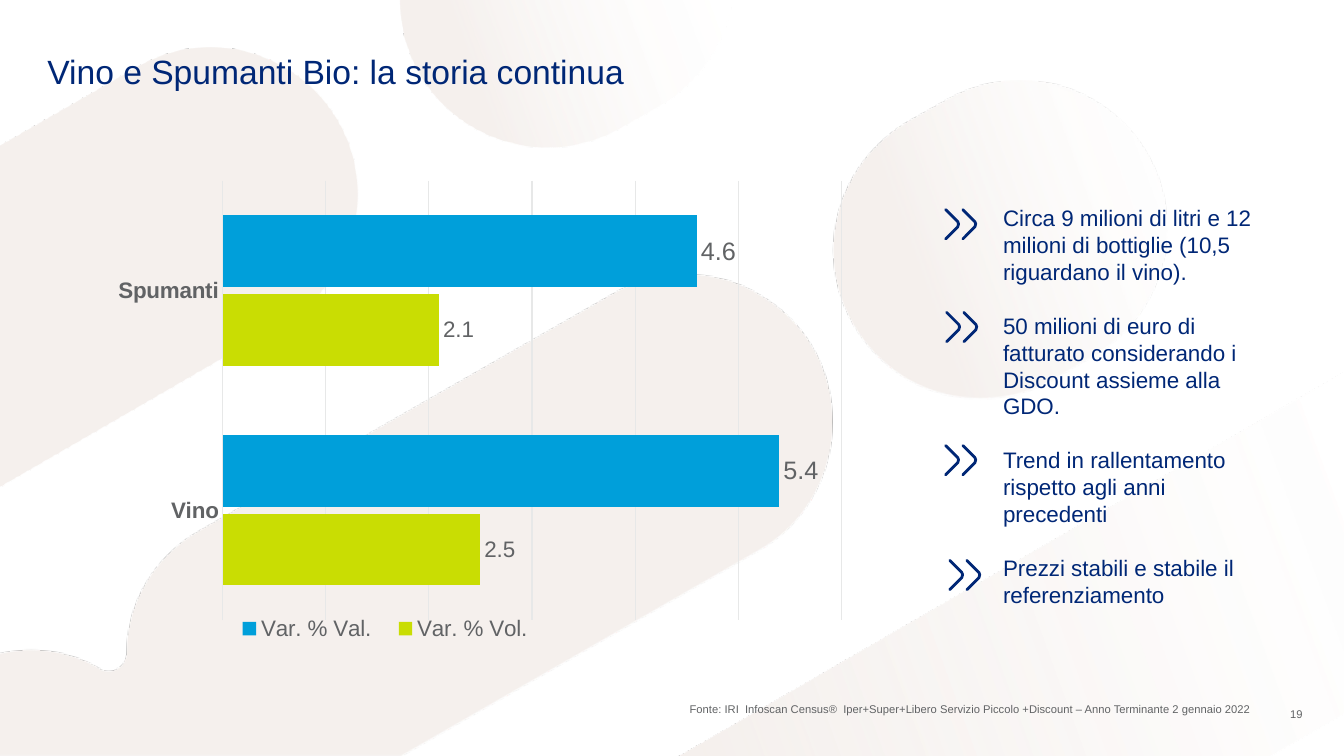
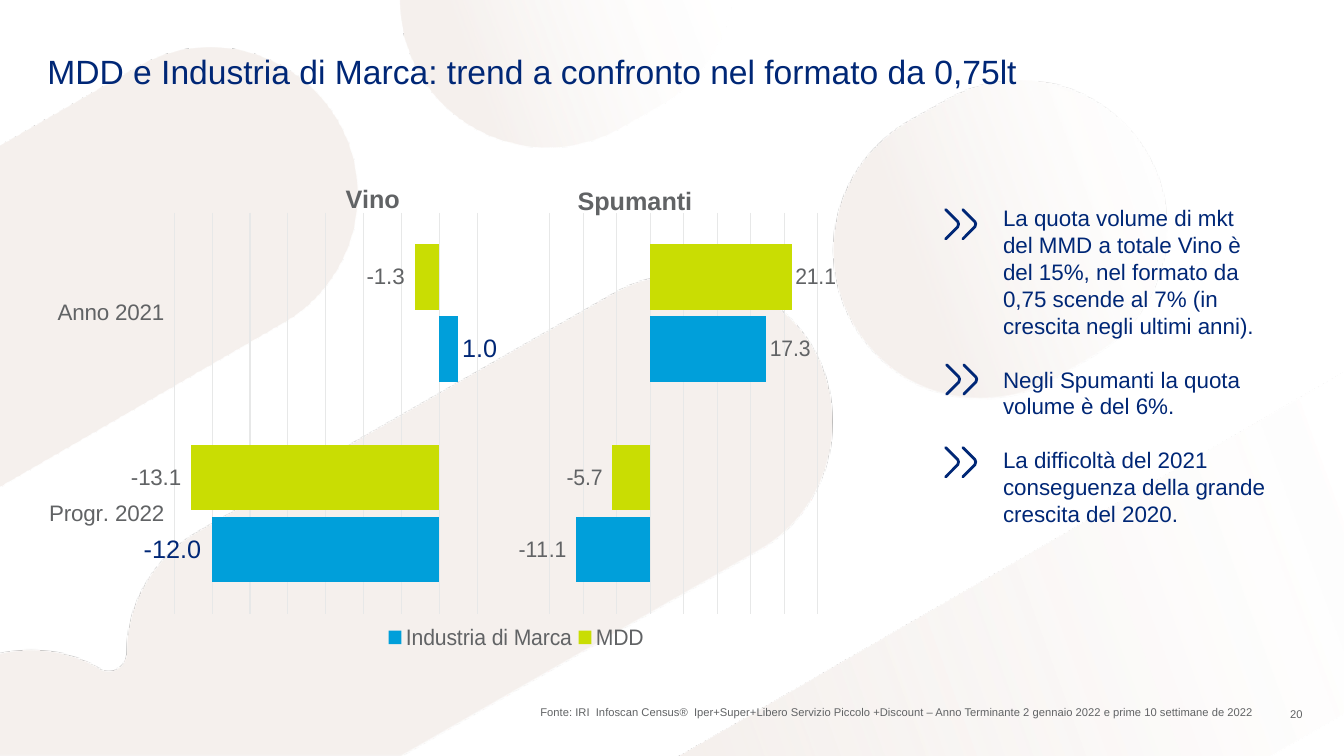
import pptx
import pptx.chart.data
import pptx.dml.color
import pptx.enum.chart
import pptx.enum.text
import pptx.oxml
import pptx.oxml.ns
import pptx.util

Inches = pptx.util.Inches
Pt = pptx.util.Pt
RGBColor = pptx.dml.color.RGBColor
ALIGN = pptx.enum.text.PP_ALIGN
ANCHOR = pptx.enum.text.MSO_ANCHOR
LABELS = pptx.enum.chart.XL_TICK_LABEL_POSITION
qn = pptx.oxml.ns.qn

NAVY = RGBColor(0x00, 0x27, 0x76)
GRAY = RGBColor(0x61, 0x63, 0x65)
GRID = RGBColor(0xE7, 0xE8, 0xE8)
LIME = RGBColor(0xC9, 0xDD, 0x03)
BLUE = RGBColor(0x00, 0x9F, 0xDA)
FONT = "Arial"
NUMBER_FORMAT = r"#,##0.0_ ;[Red]\-#,##0.0\ "
SOURCE = ("Fonte: IRI  Infoscan Census®  Iper+Super+Libero Servizio Piccolo "
          "+Discount – Anno Terminante 2 gennaio 2022")

# Background bands: gradient stops (position, colour, opacity) and contours.
# A pair is a line to a point, six numbers are a Bezier curve, in inches.
BANDS = [
    ([(0, "FFFFFF", 20), (50, "F5F0ED", 50), (100, "F5F0ED", 100)], [
        [(6.73, 7.5), (12.58, 7.5), (13.33, 7.07), (13.33, 3.69)],
    ]),
    ([(0, "FFFFFF", 20), (32, "F5F0ED", 100), (100, "F5F0ED", 100)], [
        [(2.09, 0.47), (2.34, 0.47, 2.59, 0.54, 2.82, 0.67),
         (3.27, 0.93, 3.55, 1.41, 3.55, 1.93), (3.55, 2.45, 3.27, 2.94, 2.82, 3.2),
         (0, 4.83), (0, 1.45), (1.36, 0.67), (1.59, 0.54, 1.84, 0.47, 2.09, 0.47)],
        [(3.97, 0), (7.26, 0), (7.2, 0.43, 6.94, 0.82, 6.55, 1.05), (6.16, 1.27),
         (5.71, 1.53, 5.15, 1.53, 4.7, 1.27), (4.24, 1.01, 3.97, 0.53, 3.97, 0.01)],
    ]),
    ([(0, "FFFFFF", 20), (23, "F5F0ED", 100), (100, "F5F0ED", 100)], [
        [(6.8, 2.73), (7.05, 2.73, 7.31, 2.79, 7.53, 2.93),
         (7.99, 3.19, 8.26, 3.67, 8.26, 4.19), (8.26, 4.71, 7.99, 5.2, 7.53, 5.46),
         (3.98, 7.5), (0, 7.5), (0, 6.49), (0.33, 6.41, 0.69, 6.46, 0.99, 6.64),
         (1.11, 6.71, 1.26, 6.62, 1.26, 6.48), (1.26, 5.99, 1.53, 5.54, 1.95, 5.29),
         (6.07, 2.93), (6.3, 2.79, 6.55, 2.73, 6.8, 2.73)],
        [(10.12, 0.8), (10.37, 0.8, 10.63, 0.87, 10.85, 1),
         (11.3, 1.26, 11.58, 1.74, 11.58, 2.26), (11.58, 2.79, 11.3, 3.27, 10.85, 3.53),
         (10.46, 3.76), (10.01, 4.02, 9.45, 4.02, 9, 3.76),
         (8.55, 3.49, 8.27, 3.01, 8.27, 2.49), (8.27, 1.97, 8.55, 1.49, 9, 1.22),
         (9.39, 1), (9.62, 0.87, 9.87, 0.8, 10.12, 0.8)],
    ]),
]

# Series: name, values, fill, label size, label colour
SLIDES = [
    {
        "number": "19",
        "title": "Vino e Spumanti Bio: la storia continua",
        "points": [
            "Circa 9 milioni di litri e 12 milioni di bottiglie (10,5 riguardano il vino).",
            "50 milioni di euro di fatturato considerando i Discount assieme alla GDO.",
            "Trend in rallentamento rispetto agli anni precedenti",
            "Prezzi stabili e stabile il referenziamento",
        ],
        "chevrons": [(9.38, 2.08), (9.39, 3.1), (9.38, 4.42), (9.42, 5.56)],
        "headings": [],
        "charts": [{
            "at": (-0.36, 1.76, 9.31, 4.92), "plot": (0.276, 0.007, 0.659, 0.886),
            "legend": (0.276, 0.87, 0.346, 0.08), "scale": (0, 6, 1),
            "categories": ["Vino", "Spumanti"], "bold": True,
            "series": [("Var. % Vol.", [2.5, 2.1], LIME, 16, GRAY),
                       ("Var. % Val.", [5.4, 4.6], BLUE, 18, GRAY)],
        }],
        "source": (SOURCE, 6.73, 6.91, 6.1),
    },
    {
        "number": "20",
        "title": "MDD e Industria di Marca: trend a confronto nel formato da 0,75lt",
        "points": [
            "La quota volume di mkt del MMD a totale Vino è del 15%, nel formato da "
            "0,75 scende al 7% (in crescita negli ultimi anni).",
            "Negli Spumanti la quota volume è del 6%.",
            "La difficoltà del 2021 conseguenza della grande crescita del 2020.",
        ],
        "chevrons": [(9.38, 2.08), (9.39, 3.62), (9.38, 4.44)],
        "headings": [("Vino", 3.33, 1.77), ("Spumanti", 5.63, 1.79)],
        "charts": [{
            "at": (0.47, 2.08, 4.56, 4.49), "plot": (0.276, 0.007, 0.659, 0.886),
            "scale": (-14, 2, 2), "categories": ["Anno 2021", "Progr. 2022"],
            "reverse": True, "tick_labels": LABELS.LOW,
            "series": [("Series 1", [-1.3, -13.1], LIME, 16, GRAY),
                       ("Series 2", [1, -12], BLUE, 18, NAVY)],
        }, {
            "at": (3.79, 2.08, 4.56, 4.49), "plot": (0.385, 0.007, 0.615, 0.886),
            "legend": (0, 0.905, 0.615, 0.08), "scale": (-15, 25, 5),
            "categories": ["1", "2"], "reverse": True, "hide_categories": True,
            "series": [("MDD", [21.1, -5.7], LIME, 16, GRAY),
                       ("Industria di Marca", [17.3, -11.1], BLUE, 16, GRAY)],
        }],
        "source": (SOURCE + " e prime 10 settimane de 2022", 5.25, 6.94, 7.8),
    },
]


def add_text(page, texts, left, top, width, height, *, size, color=NAVY, bold=False,
             align=ALIGN.LEFT, anchor=ANCHOR.TOP, margins=(0.1, 0.05, 0.1, 0.05), gap=0):
    box = page.shapes.add_textbox(Inches(left), Inches(top), Inches(width), Inches(height))
    frame = box.text_frame
    frame.word_wrap = True
    frame.vertical_anchor = anchor
    (frame.margin_left, frame.margin_top,
     frame.margin_right, frame.margin_bottom) = map(Inches, margins)
    for index, text in enumerate(texts):
        para = frame.paragraphs[0] if index == 0 else frame.add_paragraph()
        para.alignment = align
        if index:
            para.space_before = Pt(gap)
        span = para.add_run()
        span.text = text
        span.font.name = FONT
        span.font.size = Pt(size)
        span.font.bold = bold
        span.font.color.rgb = color


def add_outline(page, contours, left=0, top=0, close=True):
    """Draw contours of lines and Bezier curves as one freeform."""
    builder = None
    for contour in contours:
        points = [(Inches(left + segment[i]), Inches(top + segment[i + 1]))
                  for segment in contour for i in range(0, len(segment), 2)]
        if builder is None:
            builder = page.shapes.build_freeform(*points[0])
        else:
            builder.move_to(*points[0])
        builder.add_line_segments(points[1:], close=close)
    shape = builder.convert_to_shape()
    shape.shadow.inherit = False

    # Join each run of two control points and an end point into a curve
    lines = iter(list(shape._element.iter(qn("a:lnTo"))))
    for contour in contours:
        for segment in contour[1:]:
            line = next(lines)
            if len(segment) == 6:
                curve = pptx.oxml.parse_xml(
                    f'<a:cubicBezTo {pptx.oxml.ns.nsdecls("a")}/>')
                line.addprevious(curve)
                for part in (line, next(lines), next(lines)):
                    curve.append(part[0])
                    part.getparent().remove(part)
    return shape


deck = pptx.Presentation()
deck.slide_width = Inches(13.33)
deck.slide_height = Inches(7.5)

for content in SLIDES:
    page = deck.slides.add_slide(deck.slide_layouts[6])

    # Background bands
    for stops, contours in BANDS:
        band = add_outline(page, contours)
        band.line.fill.background()
        band.fill.gradient()
        gradient = band._element.spPr.find(qn("a:gradFill"))
        stop_xml = "".join(
            f'<a:gs pos="{position * 1000}"><a:srgbClr val="{color}">'
            f'<a:alpha val="{opacity * 1000}"/></a:srgbClr></a:gs>'
            for position, color, opacity in stops)
        gradient.replace(gradient.find(qn("a:gsLst")), pptx.oxml.parse_xml(
            f'<a:gsLst {pptx.oxml.ns.nsdecls("a")}>{stop_xml}</a:gsLst>'))
        gradient.find(qn("a:lin")).set("ang", str(160 * 60000))

    # Title and slide number
    add_text(page, [content["title"]], 0.47, 0.5, 12.4, 0.69, size=24, margins=(0, 0, 0, 0))
    add_text(page, [content["number"]], 12.45, 6.96, 0.47, 0.24, size=8, color=GRAY,
             align=ALIGN.RIGHT, anchor=ANCHOR.MIDDLE, margins=(0.1, 0.05, 0, 0.05))

    # Key points with double chevrons
    add_text(page, content["points"], 9.85, 1.98, 2.83, 4.41, size=16, gap=19.2)
    for left, top in content["chevrons"]:
        for offset in (0, 0.17):
            chevron = add_outline(
                page, [[(0, 0), (0.12, 0.12), (0.13, 0.13, 0.13, 0.15, 0.12, 0.17), (0, 0.29)]],
                left + offset, top, close=False)
            chevron.fill.background()
            chevron.line.color.rgb = NAVY
            chevron.line.width = Pt(2)
            chevron._element.spPr.find(qn("a:ln")).set("cap", "rnd")

    # Charts
    for spec in content["charts"]:
        data = pptx.chart.data.CategoryChartData(number_format=NUMBER_FORMAT)
        data.categories = spec["categories"]
        for name, values, *_ in spec["series"]:
            data.add_series(name, values)
        chart = page.shapes.add_chart(pptx.enum.chart.XL_CHART_TYPE.BAR_CLUSTERED,
                                      *map(Inches, spec["at"]), data).chart
        chart.has_title = False
        chart.font.name = FONT
        chart.font.size = Pt(10)
        chart.font.color.rgb = GRAY

        plot = chart.plots[0]
        plot.gap_width = 97
        plot.overlap = -10
        plot.vary_by_categories = False
        for series, (_, _, fill, size, color) in zip(plot.series, spec["series"]):
            series.invert_if_negative = False
            series.format.fill.solid()
            series.format.fill.fore_color.rgb = fill
            labels = series.data_labels
            labels.show_value = True
            labels.position = pptx.enum.chart.XL_LABEL_POSITION.OUTSIDE_END
            labels.number_format = NUMBER_FORMAT
            labels.number_format_is_linked = False
            labels.font.name = FONT
            labels.font.size = Pt(size)
            labels.font.color.rgb = color

        axis = chart.category_axis
        axis.visible = not spec.get("hide_categories", False)
        axis.reverse_order = spec.get("reverse", False)
        axis.major_tick_mark = pptx.enum.chart.XL_TICK_MARK.NONE
        axis.tick_label_position = spec.get("tick_labels", LABELS.NEXT_TO_AXIS)
        axis.tick_labels.font.size = Pt(16)
        axis.tick_labels.font.bold = spec.get("bold", False)
        axis.format.line.color.rgb = GRID
        axis.format.line.width = Pt(0.75)
        axis = chart.value_axis
        axis.visible = False
        axis.minimum_scale, axis.maximum_scale, axis.major_unit = spec["scale"]
        axis.major_gridlines.format.line.color.rgb = GRID
        axis.major_gridlines.format.line.width = Pt(0.75)

        # Fixed places of the plot area and the legend
        area = chart._chartSpace.chart.plotArea
        places = [(area, 0, '<c:layoutTarget val="inner"/>', spec["plot"])]
        chart.has_legend = "legend" in spec
        if chart.has_legend:
            chart.legend.position = pptx.enum.chart.XL_LEGEND_POSITION.BOTTOM
            chart.legend.include_in_layout = False
            chart.legend.font.name = FONT
            chart.legend.font.size = Pt(16)
            chart.legend.font.color.rgb = GRAY
            places.append((chart.legend._element, 1, "", spec["legend"]))
        for parent, index, target, (x, y, w, h) in places:
            for old in parent.findall(qn("c:layout")):
                parent.remove(old)
            parent.insert(index, pptx.oxml.parse_xml(
                f'<c:layout {pptx.oxml.ns.nsdecls("c")}><c:manualLayout>{target}'
                '<c:xMode val="edge"/><c:yMode val="edge"/>'
                f'<c:x val="{x}"/><c:y val="{y}"/><c:w val="{w}"/><c:h val="{h}"/>'
                '</c:manualLayout></c:layout>'))

    # Chart headings and source line
    for heading, left, top in content["headings"]:
        add_text(page, [heading], left, top, 2.48, 0.4, size=18, color=GRAY, bold=True)
    text, left, top, width = content["source"]
    add_text(page, [text], left, top, width, 0.25, size=8, color=GRAY,
             margins=(0.11, 0.06, 0.11, 0.06))

deck.save("out.pptx")
